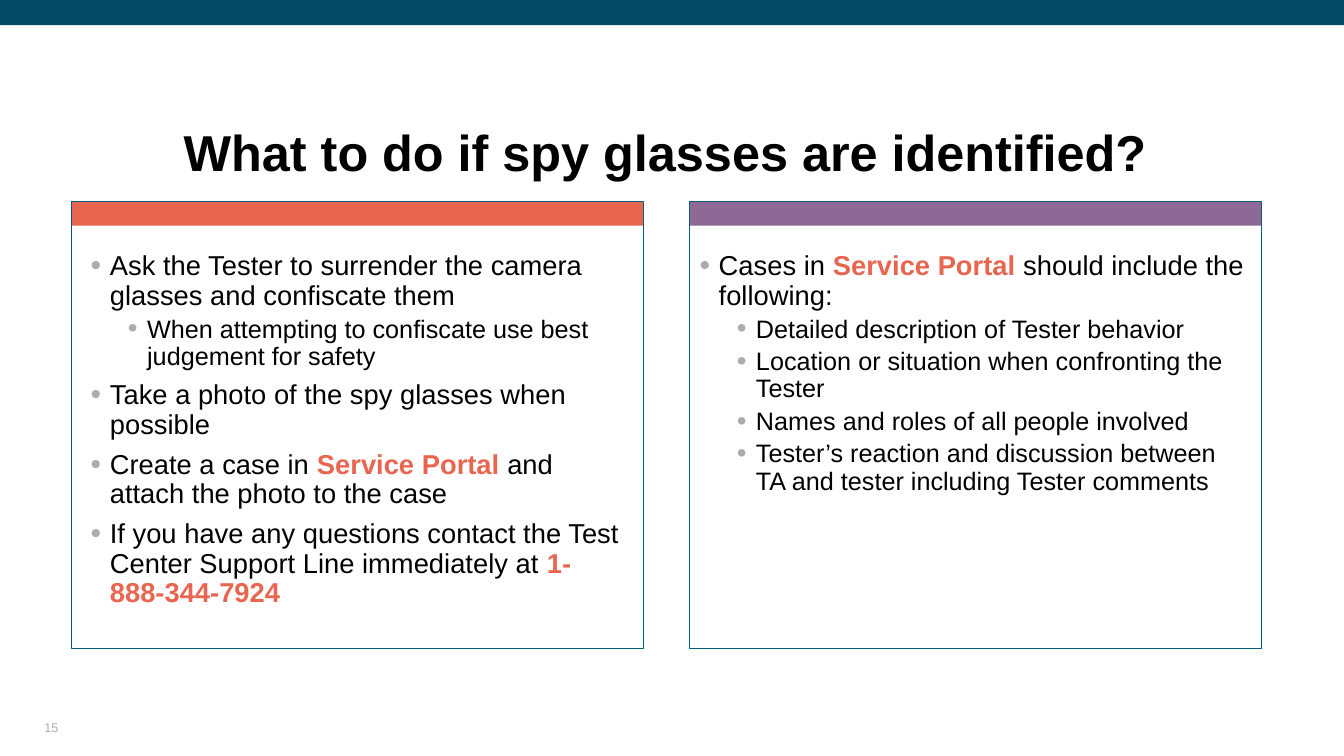
import pptx
import pptx.util
import pptx.dml.color
import pptx.enum.shapes
import pptx.enum.text
import pptx.oxml.ns
import lxml.etree

Inches = pptx.util.Inches
RGBColor = pptx.dml.color.RGBColor
ANCHOR = pptx.enum.text.MSO_ANCHOR
ALIGN = pptx.enum.text.PP_ALIGN

TEAL = RGBColor(0x01, 0x4B, 0x64)
OUTLINE = RGBColor(0x00, 0x61, 0x7D)
CORAL = RGBColor(0xE8, 0x66, 0x50)
PURPLE = RGBColor(0x8E, 0x69, 0x96)
GRAY = RGBColor(0xAF, 0xAB, 0xAB)
BLACK = RGBColor(0, 0, 0)

CARD_TOP, CARD_WIDTH, CARD_HEIGHT = 2, 5.67, 4.43

# Level: left indent in inches, text size and space before in points
LEVELS = [
    {"indent": 0.19, "size": 19.5, "before": 7.5},
    {"indent": 0.56, "size": 18, "before": 3.8},
]

# Each paragraph is a level and its runs; every second run is highlighted
CARDS = [
    {"left": 0.71, "color": CORAL, "inset": 0.19, "text": [
        (0, ["Ask the Tester to surrender the camera glasses and confiscate them"]),
        (1, ["When attempting to confiscate use best judgement for safety"]),
        (0, ["Take a photo of the spy glasses when possible"]),
        (0, ["Create a case in ", "Service Portal ", "and attach the photo to the case"]),
        (0, ["If you have any questions contact the Test Center Support Line "
             "immediately at ", "1-888-344-7924"]),
    ]},
    {"left": 6.84, "color": PURPLE, "inset": 0.1, "text": [
        (0, ["Cases in ", "Service Portal ", "should include the following:"]),
        (1, ["Detailed description of Tester behavior"]),
        (1, ["Location or situation when confronting the Tester"]),
        (1, ["Names and roles of all people involved"]),
        (1, ["Tester’s reaction and discussion between TA and tester "
             "including Tester comments"]),
    ]},
]


def add_box(left, top, width, height, fill=None):
    box = page.shapes.add_shape(
        pptx.enum.shapes.MSO_SHAPE.RECTANGLE,
        Inches(left), Inches(top), Inches(width), Inches(height))
    box.shadow.inherit = False
    if fill is None:
        box.fill.background()
        box.line.color.rgb = OUTLINE
        box.line.width = pptx.util.Pt(0.75)
    else:
        box.fill.solid()
        box.fill.fore_color.rgb = fill
        box.line.fill.background()
    return box


def set_format(target, values):
    for name, value in values.items():
        setattr(target, name, value)


deck = pptx.Presentation()
deck.slide_width, deck.slide_height = Inches(13.33), Inches(7.5)
page = deck.slides.add_slide(deck.slide_layouts[5])
no_insets = {"margin_left": 0, "margin_top": 0, "margin_right": 0,
             "margin_bottom": 0, "word_wrap": True}

# Top band
add_box(0, 0, 13.33, 0.25, TEAL)

# Title
title = page.shapes.title
set_format(title, {"left": Inches(0.44), "top": Inches(0.57),
                   "width": Inches(12.32), "height": Inches(1.27)})
set_format(title.text_frame, {**no_insets, "vertical_anchor": ANCHOR.MIDDLE,
                              "auto_size": pptx.enum.text.MSO_AUTO_SIZE.NONE})
para = title.text_frame.paragraphs[0]
set_format(para, {"alignment": ALIGN.CENTER, "line_spacing": 2.0})
span = para.add_run()
span.text = "What to do if spy glasses are identified?"
set_format(span.font, {"name": "Arial", "size": pptx.util.Pt(36), "bold": True})
span.font.color.rgb = BLACK

# Cards: coloured header bar, outline and bullets
for card in CARDS:
    add_box(card["left"], CARD_TOP, CARD_WIDTH, 0.24, card["color"])
    frame = add_box(card["left"], CARD_TOP, CARD_WIDTH, CARD_HEIGHT).text_frame
    set_format(frame, {
        "margin_left": Inches(card["inset"]), "margin_right": Inches(card["inset"]),
        "margin_top": Inches(0.5), "margin_bottom": Inches(0.05),
        "word_wrap": True, "vertical_anchor": ANCHOR.TOP})
    for number, (level, texts) in enumerate(card["text"]):
        style = LEVELS[level]
        para = frame.add_paragraph() if number else frame.paragraphs[0]
        set_format(para, {
            "level": level, "alignment": ALIGN.LEFT, "line_spacing": 0.9,
            "space_before": pptx.util.Pt(style["before"] if number else 0)})
        properties = para._p.get_or_add_pPr()
        properties.set("marL", str(Inches(style["indent"])))
        properties.set("indent", str(Inches(-0.19)))
        qn = pptx.oxml.ns.qn
        bullet_color = lxml.etree.SubElement(properties, qn("a:buClr"))
        lxml.etree.SubElement(bullet_color, qn("a:srgbClr"), val=str(GRAY))
        lxml.etree.SubElement(properties, qn("a:buSzPct"), val="110000")
        lxml.etree.SubElement(properties, qn("a:buFont"), typeface="Arial")
        lxml.etree.SubElement(properties, qn("a:buChar"), char="•")
        for position, text in enumerate(texts):
            highlighted = position % 2 == 1
            span = para.add_run()
            span.text = text
            set_format(span.font, {"name": "Arial", "bold": highlighted,
                                   "size": pptx.util.Pt(style["size"])})
            span.font.color.rgb = CORAL if highlighted else BLACK

# Page number
footer = page.shapes.add_textbox(Inches(0.44), Inches(7.05), Inches(3), Inches(0.24))
set_format(footer.text_frame, {**no_insets, "vertical_anchor": ANCHOR.BOTTOM})
span = footer.text_frame.paragraphs[0].add_run()
span.text = "15"
set_format(span.font, {"name": "Arial", "size": pptx.util.Pt(9)})
span.font.color.rgb = GRAY

deck.save("out.pptx")
